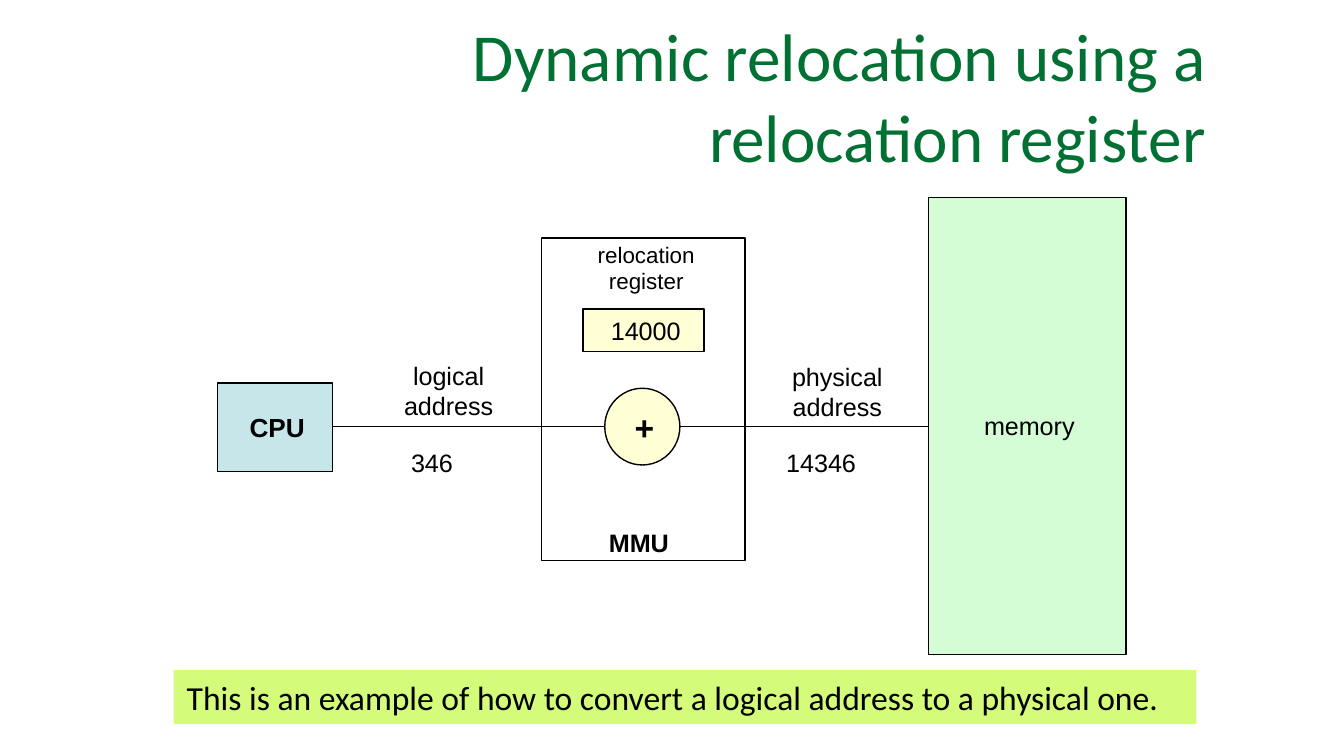
from dataclasses import dataclass
from typing import Optional

import pptx
import pptx.dml.color
import pptx.enum.shapes
import pptx.enum.text
import pptx.oxml
import pptx.util

Cm = pptx.util.Cm
Pt = pptx.util.Pt
RGBColor = pptx.dml.color.RGBColor
MSO_SHAPE = pptx.enum.shapes.MSO_SHAPE
PP_ALIGN = pptx.enum.text.PP_ALIGN
MSO_ANCHOR = pptx.enum.text.MSO_ANCHOR

BLACK = RGBColor(0x00, 0x00, 0x00)
WHITE = RGBColor(0xFF, 0xFF, 0xFF)
GREEN = RGBColor(0x00, 0x70, 0x33)
BLUE = RGBColor(0xC6, 0xE6, 0xE9)
CREAM = RGBColor(0xFF, 0xFE, 0xD5)
MINT = RGBColor(0xD4, 0xFD, 0xD5)
LIME = RGBColor(0xD4, 0xFB, 0x79)

LINE_WIDTH = Pt(0.75)
BUS_Y = 8.06


@dataclass
class Block:
    """A filled part of the diagram; lengths in cm."""
    left: float
    top: float
    width: float
    height: float
    fill: RGBColor
    text: str = ""
    size: float = 13.5
    bold: bool = False
    kind: MSO_SHAPE = MSO_SHAPE.RECTANGLE


@dataclass
class Label:
    """Free-standing text; lengths in cm."""
    left: float
    top: float
    width: float
    height: float
    text: str
    size: float = 13.5
    bold: bool = False
    align: PP_ALIGN = PP_ALIGN.CENTER


BLOCKS = [
    Block(4.11, 7.24, 2.18, 1.68, BLUE, "CPU", size=14, bold=True),
    Block(10.24, 4.5, 3.84, 6.1, WHITE),
    Block(11.02, 5.84, 2.29, 0.81, CREAM, "14000"),
    Block(11.43, 7.34, 1.42, 1.45, CREAM, "+", size=18, bold=True, kind=MSO_SHAPE.OVAL),
    Block(17.55, 3.73, 3.73, 8.64, MINT, "memory"),
]

LABELS = [
    Label(10.92, 4.45, 2.51, 1.24, "relocation\nregister", size=12),
    Label(11.33, 9.86, 1.63, 0.81, "MMU", bold=True, align=PP_ALIGN.LEFT),
    Label(7.32, 6.71, 2.24, 1.4, "logical\naddress"),
    Label(14.58, 6.73, 2.41, 1.4, "physical\naddress"),
    Label(7.59, 8.36, 1.24, 0.81, "346", align=PP_ALIGN.LEFT),
    Label(14.68, 8.36, 1.83, 0.81, "14346", align=PP_ALIGN.LEFT),
]

BUS_SPANS = [(6.29, 11.43), (12.85, 17.55)]


def set_text(sp, text: str, *, size: float = 13.5, font: str = "Arial",
             color: RGBColor = BLACK, bold: bool = False,
             align: PP_ALIGN = PP_ALIGN.CENTER,
             anchor: MSO_ANCHOR = MSO_ANCHOR.MIDDLE,
             left_inset: float = 0.18, inset: float = 0.1) -> None:
    tf = sp.text_frame
    tf.text = text
    tf.word_wrap = True
    tf.auto_size = pptx.enum.text.MSO_AUTO_SIZE.NONE
    tf.vertical_anchor = anchor
    tf.margin_left = Cm(left_inset)
    tf.margin_top = tf.margin_right = tf.margin_bottom = Cm(inset)
    for p in tf.paragraphs:
        p.alignment = align
        for r in p.runs:
            r.font.name = font
            r.font.size = Pt(size)
            r.font.bold = bold
            r.font.color.rgb = color


def add_block(s, block: Block, line: Optional[RGBColor] = BLACK):
    sp = s.shapes.add_shape(block.kind, Cm(block.left), Cm(block.top),
                            Cm(block.width), Cm(block.height))
    sp.shadow.inherit = False
    sp.fill.solid()
    sp.fill.fore_color.rgb = block.fill
    if line is None:
        sp.line.fill.background()
    else:
        sp.line.color.rgb = line
        sp.line.width = LINE_WIDTH
    if block.text:
        set_text(sp, block.text, size=block.size, bold=block.bold)
    return sp


def add_label(s, label: Label) -> None:
    sp = s.shapes.add_textbox(Cm(label.left), Cm(label.top),
                              Cm(label.width), Cm(label.height))
    set_text(sp, label.text, size=label.size, bold=label.bold,
             align=label.align, anchor=MSO_ANCHOR.TOP)


def add_bus(s, start: float, end: float) -> None:
    line = s.shapes.add_connector(pptx.enum.shapes.MSO_CONNECTOR.STRAIGHT,
                                  Cm(start), Cm(BUS_Y), Cm(end), Cm(BUS_Y))
    line.line.color.rgb = BLACK
    line.line.width = LINE_WIDTH
    line._element.spPr.append(pptx.oxml.parse_xml(
        '<a:effectLst xmlns:a="http://schemas.openxmlformats.org/drawingml/2006/main"/>'))


def main() -> None:
    prs = pptx.Presentation()
    prs.slide_width, prs.slide_height = Cm(25.4), Cm(14.29)
    s = prs.slides.add_slide(prs.slide_layouts[5])

    title = s.shapes.title
    title.left, title.top, title.width, title.height = Cm(4.42), Cm(0.25), Cm(18.47), Cm(3.1)
    set_text(title, "Dynamic relocation using a relocation register", size=36,
             font="Calibri", color=GREEN, align=PP_ALIGN.RIGHT)

    for block in BLOCKS:
        add_block(s, block)
    for start, end in BUS_SPANS:
        add_bus(s, start, end)
    for label in LABELS:
        add_label(s, label)

    banner = add_block(s, Block(3.28, 12.67, 19.33, 1.02, LIME), line=None)
    set_text(banner, "This is an example of how to convert a logical address to a physical one.",
             size=18, font="Calibri", align=PP_ALIGN.LEFT, left_inset=0.25)

    prs.save("out.pptx")


if __name__ == "__main__":
    main()
